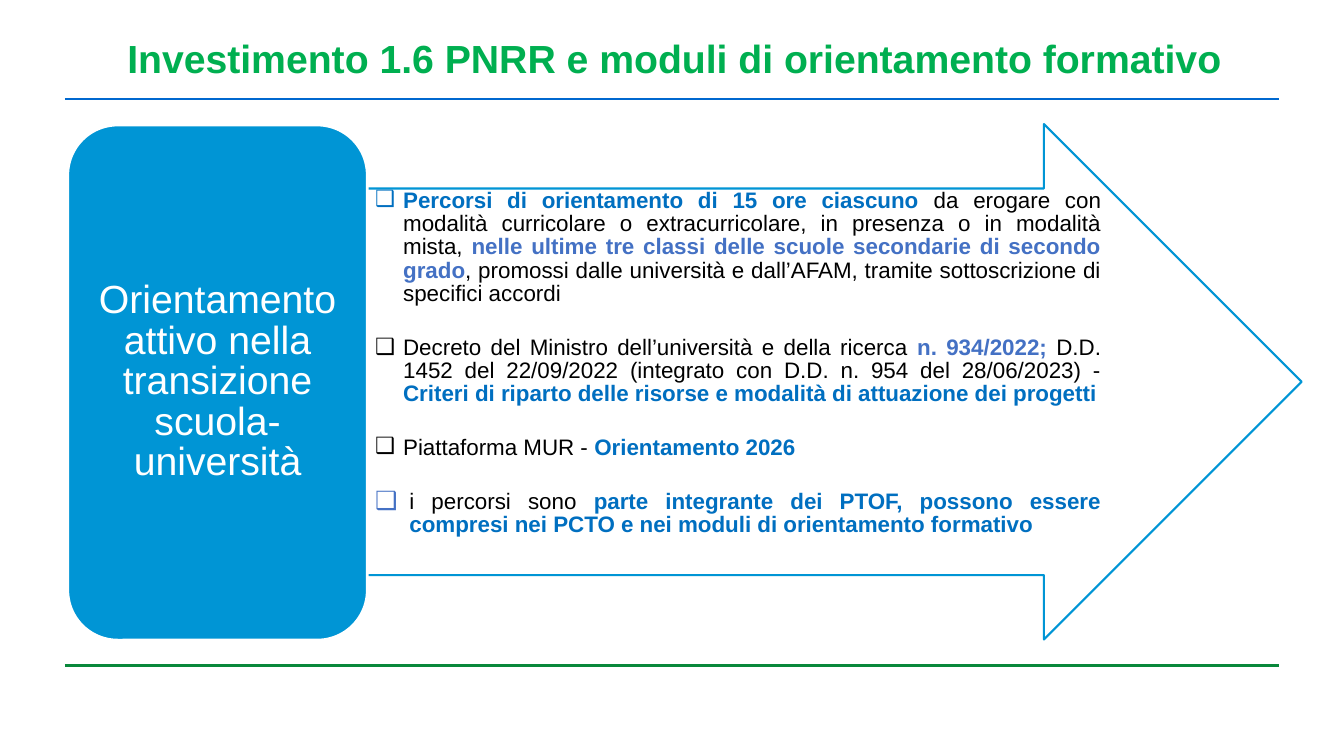
from lxml.etree import SubElement
from pptx import Presentation
from pptx.dml.color import RGBColor
from pptx.enum.shapes import MSO_CONNECTOR, MSO_SHAPE
from pptx.enum.text import MSO_ANCHOR as Anchor, PP_ALIGN as Align
from pptx.oxml.ns import qn
from pptx.util import Pt

FONT = "Arial"
GREEN, RULE_BLUE, RULE_GREEN = "00AF50", "0068CF", "09883B"
CYAN, BLUE, INDIGO = "0095D5", "006FC0", "4471C4"
BLACK, WHITE = "000000", "FFFFFF"

# top, height, text indent, bullet colour, bullet percent, runs of (text, colour)
POINTS = [
    (131.8, 87, 20, BLUE, 100, [
        ("Percorsi di orientamento di 15 ore ciascuno ", BLUE),
        ("da erogare con modalità curricolare o extracurricolare, "
         "in presenza o in modalità mista, ", BLACK),
        ("nelle ultime tre classi delle scuole secondarie di secondo grado", INDIGO),
        (", promossi dalle università e dall’AFAM, tramite sottoscrizione "
         "di specifici accordi", BLACK)]),
    (236.9, 54, 20, BLACK, 100, [
        ("Decreto del Ministro dell’università e della ricerca ", BLACK),
        ("n. 934/2022; ", INDIGO),
        ("D.D. 1452 del 22/09/2022 (integrato con D.D. n. 954 del 28/06/2023) - ", BLACK),
        ("Criteri di riparto delle risorse e modalità di attuazione dei progetti", BLUE)]),
    (308.2, 21, 20, BLACK, 100, [
        ("Piattaforma MUR - ", BLACK),
        ("Orientamento 2026", BLUE)]),
    (347, 37.5, 24.5, INDIGO, 112, [
        ("i percorsi sono ", BLACK),
        ("parte integrante dei PTOF, possono essere compresi nei PCTO "
         "e nei moduli di orientamento formativo", BLUE)]),
]


def rgb(color):
    return RGBColor.from_string(color)


def set_frame(frame, side=0, top=0, anchor=Anchor.TOP):
    frame.word_wrap = True
    frame.margin_left = frame.margin_right = Pt(side)
    frame.margin_top, frame.margin_bottom = Pt(top), 0
    frame.vertical_anchor = anchor


def add_run(paragraph, text, size, color, bold=False):
    run = paragraph.add_run()
    run.text = text
    font = run.font
    font.name, font.size, font.bold = FONT, Pt(size), bold
    font.color.rgb = rgb(color)


def add_bullet(paragraph, indent, color, percent):
    props = paragraph._p.get_or_add_pPr()
    props.set("marL", str(Pt(indent)))
    props.set("indent", str(-Pt(indent)))
    SubElement(SubElement(props, qn("a:buClr")), qn("a:srgbClr"), val=color)
    SubElement(props, qn("a:buSzPct"), val=str(percent * 1000))
    SubElement(props, qn("a:buFont"), typeface=FONT)
    SubElement(props, qn("a:buChar"), char="❑")


def add_rule(slide, left, top, width, color, weight):
    rule = slide.shapes.add_connector(
        MSO_CONNECTOR.STRAIGHT, Pt(left), Pt(top), Pt(left + width), Pt(top))
    rule.line.color.rgb = rgb(color)
    rule.line.width = Pt(weight)
    SubElement(rule._element.spPr, qn("a:effectLst"))


def add_heading(slide, left, top, width, height):
    title = slide.shapes.title
    title.left, title.top, title.width, title.height = map(Pt, (left, top, width, height))
    set_frame(title.text_frame)
    heading = title.text_frame.paragraphs[0]
    heading.alignment = Align.LEFT
    add_run(heading, "Investimento 1.6 PNRR e moduli di orientamento formativo",
            28, GREEN, True)


def add_arrow(slide, left, top, width, height):
    arrow = slide.shapes.add_shape(
        MSO_SHAPE.RIGHT_ARROW, Pt(left), Pt(top), Pt(width), Pt(height))
    arrow.adjustments[0] = 0.75
    arrow.shadow.inherit = False
    arrow.fill.background()
    arrow.line.color.rgb = rgb(CYAN)
    arrow.line.width = Pt(1.5)


def add_points(slide, left, width):
    for top, height, indent, color, percent, runs in POINTS:
        box = slide.shapes.add_textbox(Pt(left), Pt(top), Pt(width), Pt(height))
        set_frame(box.text_frame, top=3.6 if height > 25 else 0.9)
        point = box.text_frame.paragraphs[0]
        point.alignment = Align.JUSTIFY
        if height > 25:
            point.line_spacing = Pt(16.6)
        add_bullet(point, indent, color, percent)
        for text, text_color in runs:
            add_run(point, text, 16, text_color, text_color != BLACK)


def add_topic(slide, left, top, width, height):
    panel = slide.shapes.add_shape(
        MSO_SHAPE.ROUNDED_RECTANGLE, Pt(left), Pt(top), Pt(width), Pt(height))
    panel.shadow.inherit = False
    panel.fill.solid()
    panel.fill.fore_color.rgb = rgb(CYAN)
    panel.line.color.rgb = rgb(WHITE)
    panel.line.width = Pt(2)
    # The preset already insets its text by about 10 pt at the rounded corners.
    set_frame(panel.text_frame, side=10, anchor=Anchor.MIDDLE)
    topic = panel.text_frame.paragraphs[0]
    topic.alignment = Align.CENTER
    topic.line_spacing = 0.86
    add_run(topic, "Orientamento attivo nella transizione scuola- università", 28, WHITE)


def main():
    deck = Presentation()
    deck.slide_width, deck.slide_height = Pt(960), Pt(540)
    slide = deck.slides.add_slide(deck.slide_layouts[5])
    add_rule(slide, 46.4, 475.2, 867.4, RULE_GREEN, 2.25)
    add_rule(slide, 46.4, 70.6, 867.4, RULE_BLUE, 1.5)
    add_heading(slide, 90.9, 24.5, 800, 35)
    add_arrow(slide, 259.2, 88.6, 670.6, 368.2)
    add_points(slide, 268, 518.5)
    add_topic(slide, 48.4, 89.3, 214, 368)
    deck.save("out.pptx")


if __name__ == "__main__":
    main()
